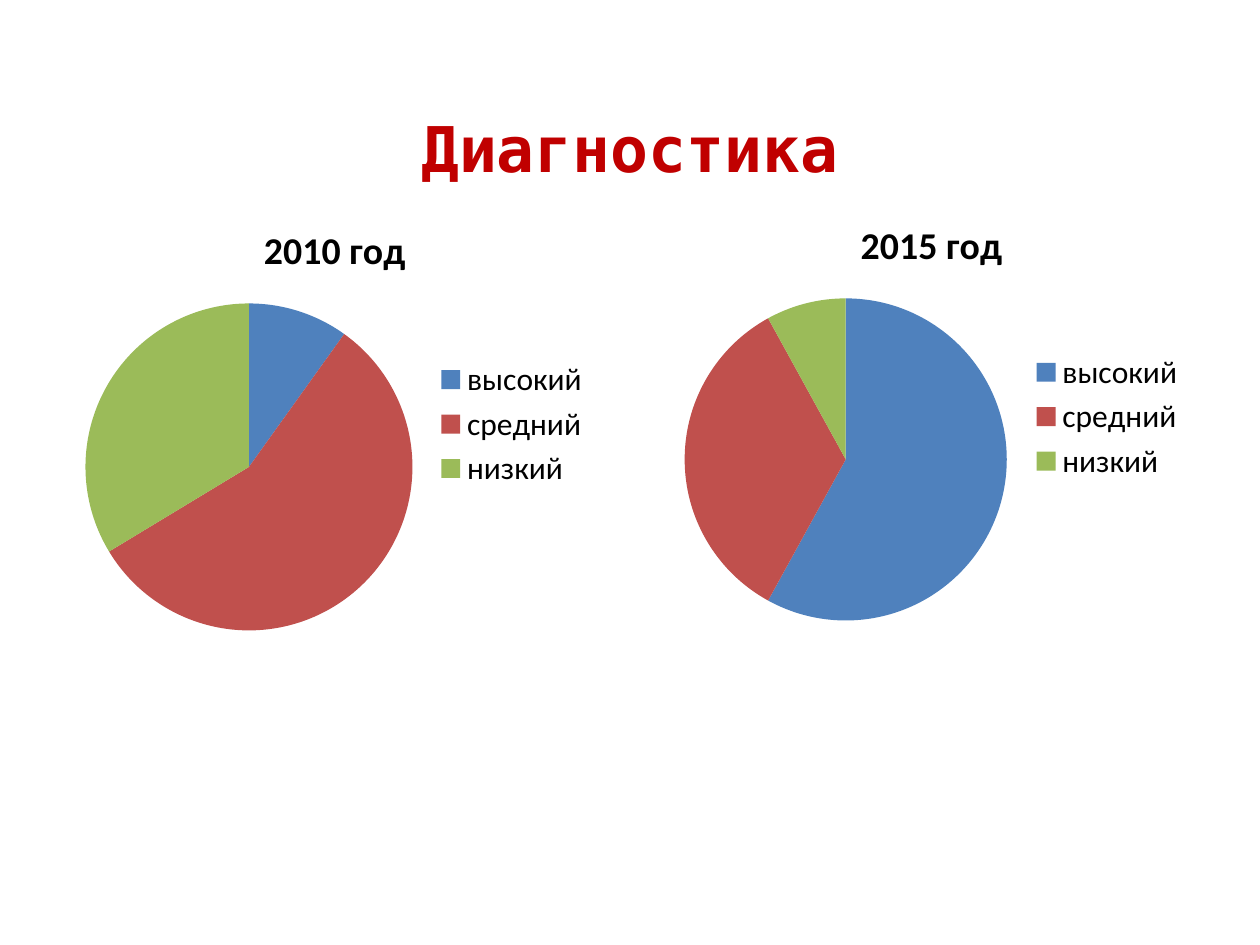
"""Build a slide with two pie charts of levels in 2010 and 2015."""
from pptx import Presentation
from pptx.chart.data import CategoryChartData
from pptx.dml.color import RGBColor
from pptx.enum.chart import XL_CHART_TYPE, XL_LEGEND_POSITION
from pptx.enum.text import MSO_ANCHOR, PP_ALIGN
from pptx.util import Cm, Pt

CRIMSON = RGBColor(0xC0, 0x00, 0x00)
BLACK = RGBColor(0x00, 0x00, 0x00)
BLUE = RGBColor(0x4F, 0x81, 0xBD)
RED = RGBColor(0xC0, 0x50, 0x4D)
GREEN = RGBColor(0x9B, 0xBB, 0x59)

LEVELS = {"высокий": BLUE, "средний": RED, "низкий": GREEN}
PIES = [
    ("2010 год", (10, 57, 34), (1.35, 4.04, 10.8, 9.02)),
    ("2015 год", (58, 34, 8), (13.41, 3.94, 10.74, 8.92)),
]


class Deck:
    """Hold the style and the current slide."""

    def __init__(self):
        self.show = Presentation()
        self.show.slide_width = Cm(25.4)
        self.show.slide_height = Cm(19.05)
        self.slide = self.show.slides.add_slide(self.show.slide_layouts[6])

    def style(self, font, face, size, color, bold=False):
        """Set the look of a font."""
        font.name = face
        font.size = Pt(size)
        font.bold = bold
        font.color.rgb = color

    def title(self, text, area):
        """Add the heading."""
        frame = self.slide.shapes.add_textbox(*map(Cm, area)).text_frame
        frame.word_wrap = True
        frame.vertical_anchor = MSO_ANCHOR.MIDDLE
        line = frame.paragraphs[0]
        line.text = text
        line.alignment = PP_ALIGN.CENTER
        self.style(line.font, "DejaVu Sans Mono", 36, CRIMSON, True)

    def pie(self, name, values, area):
        """Add a pie chart with a title and a legend."""
        data = CategoryChartData()
        data.categories = list(LEVELS)
        data.add_series(name, values)
        chart = self.slide.shapes.add_chart(
            XL_CHART_TYPE.PIE, *map(Cm, area), data).chart
        self.style(chart.font, "Calibri", 18, BLACK)

        chart.has_title = True
        head = chart.chart_title
        head.include_in_layout = False
        line = head.text_frame.paragraphs[0]
        line.text = name
        self.style(line.font, "Calibri", 21.6, BLACK, True)

        chart.has_legend = True
        chart.legend.position = XL_LEGEND_POSITION.RIGHT
        chart.legend.include_in_layout = False

        plot = chart.plots[0]
        plot.vary_by_categories = True
        for i, color in enumerate(LEVELS.values()):
            fill = plot.series[0].points[i].format.fill
            fill.solid()
            fill.fore_color.rgb = color


def main():
    """Fill the slide and save it."""
    deck = Deck()
    deck.title("Диагностика", (1.19, 1.73, 23.01, 2.49))
    for name, values, area in PIES:
        deck.pie(name, values, area)
    deck.show.save("out.pptx")


if __name__ == "__main__":
    main()
